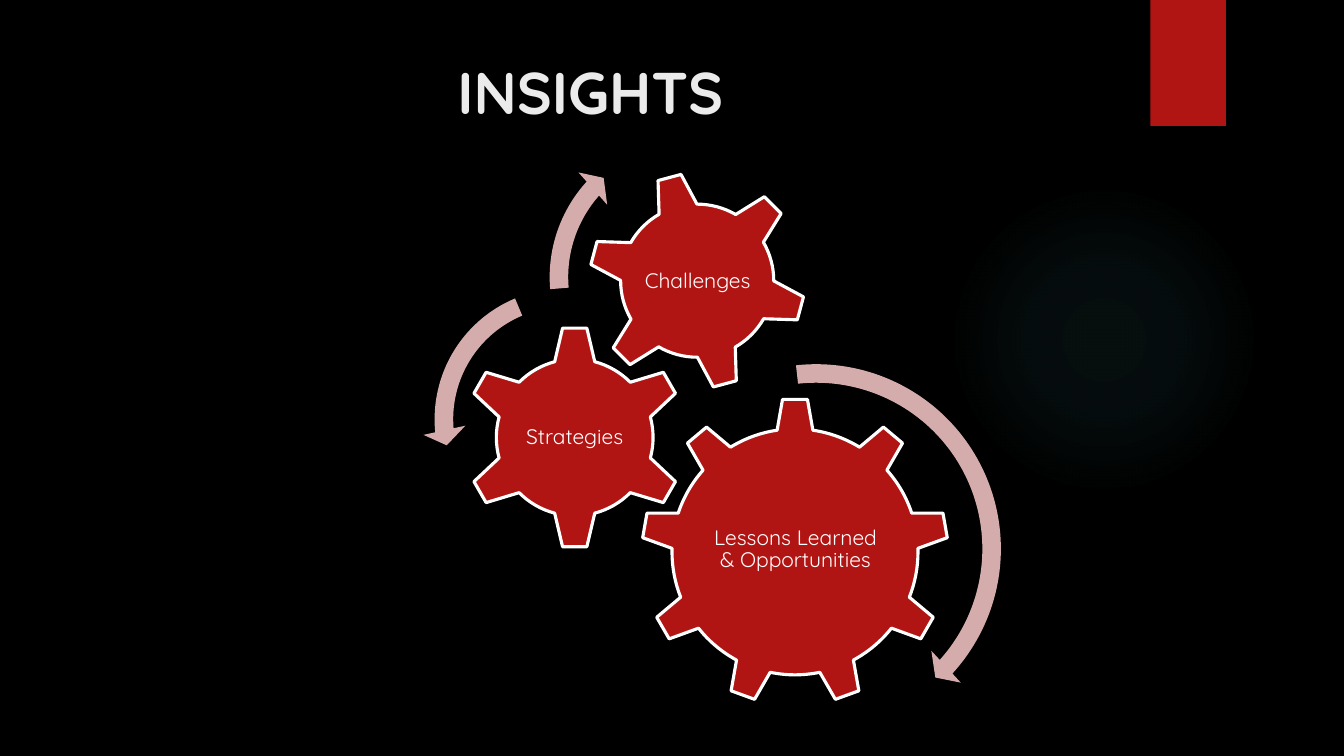
import pptx
import pptx.util
import pptx.oxml
import pptx.oxml.ns
import pptx.dml.color
import pptx.enum.shapes
import pptx.enum.text

Inches = pptx.util.Inches
Kind = pptx.enum.shapes.MSO_SHAPE
Anchor = pptx.enum.text.MSO_ANCHOR

COLORS = {
    "back": "000000",
    "red": "B01513",
    "pink": "D4ACAB",
    "white": "FFFFFF",
    "title": "EBEBEB",
    "glow": "50B9C1",
}


def color(name):
    return pptx.dml.color.RGBColor.from_string(COLORS[name])


class Deck:
    font = "Quicksand"

    def __init__(self):
        self.show = pptx.Presentation()
        self.show.slide_width = Inches(13.33)
        self.show.slide_height = Inches(7.5)
        self.slide = self.show.slides.add_slide(self.show.slide_layouts[6])
        fill = self.slide.background.fill
        fill.solid()
        fill.fore_color.rgb = color("back")

    def shape(self, kind, box, fill, line=None, turn=0, adjust=()):
        item = self.slide.shapes.add_shape(kind, *map(Inches, box))
        item.shadow.inherit = False
        item.rotation = turn
        for i, value in enumerate(adjust):
            item.adjustments[i] = value
        item.fill.solid()
        item.fill.fore_color.rgb = color(fill)
        if line:
            item.line.color.rgb = color(line)
            item.line.width = pptx.util.Pt(2.25)
        else:
            item.line.fill.background()
        return item

    def glow(self, box, stops):
        """Draw a soft round light; stops are (position %, opacity %)."""
        item = self.shape(Kind.OVAL, box, "glow")
        marks = "".join(
            f'<a:gs pos="{pos * 1000}"><a:srgbClr val="{COLORS["glow"]}">'
            f'<a:alpha val="{alpha * 1000}"/></a:srgbClr></a:gs>'
            for pos, alpha in stops)
        grad = pptx.oxml.parse_xml(
            f'<a:gradFill {pptx.oxml.ns.nsdecls("a")}><a:gsLst>{marks}</a:gsLst>'
            '<a:path path="circle"><a:fillToRect l="50000" t="50000" '
            'r="50000" b="50000"/></a:path></a:gradFill>')
        props = item.fill._xPr
        props.replace(props.find(pptx.oxml.ns.qn("a:solidFill")), grad)

    def text(self, words, box, size=15, fill="white", bold=False,
             anchor=Anchor.MIDDLE, inset=(0.02, 0.02), lead=0.9):
        frame = self.slide.shapes.add_textbox(*map(Inches, box)).text_frame
        frame.word_wrap = True
        frame.vertical_anchor = anchor
        frame.margin_left = frame.margin_right = Inches(inset[0])
        frame.margin_top = frame.margin_bottom = Inches(inset[1])
        para = frame.paragraphs[0]
        para.alignment = pptx.enum.text.PP_ALIGN.CENTER
        para.line_spacing = lead
        run = para.add_run()
        run.text = words
        run.font.name = self.font
        run.font.size = pptx.util.Pt(size)
        run.font.bold = bold
        run.font.color.rgb = color(fill)

    def gear(self, words, kind, box, area, turn=0):
        self.shape(kind, box, "red", line="white", turn=turn)
        self.text(words, area)

    def arrow(self, kind, left, top, side, adjust):
        self.shape(kind, (left, top, side, side), "pink", adjust=adjust)


def main():
    deck = Deck()

    # Backdrop and title
    deck.glow((9.41, 1.83, 3.08, 3.08), [(0, 7), (36, 6), (69, 0)])
    deck.shape(Kind.RECTANGLE, (11.41, 0, 0.75, 1.25), "red")
    deck.text("INSIGHTS", (0.71, 0.5, 10.29, 1.53), size=42, fill="title",
              bold=True, anchor=Anchor.TOP, inset=(0.1, 0.05), lead=1.0)

    # Gears with their labels
    deck.gear("Lessons Learned & Opportunities", Kind.GEAR_9,
              (6.36, 3.95, 3.05, 3.05), (6.98, 4.67, 1.82, 1.57))
    deck.gear("Strategies", Kind.GEAR_6,
              (4.59, 3.23, 2.22, 2.22), (5.15, 3.79, 1.1, 1.1))
    deck.gear("Challenges", Kind.GEAR_6,
              (5.83, 1.7, 2.17, 2.17), (6.31, 2.18, 1.22, 1.22), turn=345)

    # Turning arrows
    deck.arrow(Kind.CIRCULAR_ARROW, 6.14, 3.49, 3.91,
               (0.047, 2.99, 25.338, 158.238, 0.055))
    deck.arrow(Kind.LEFT_CIRCULAR_ARROW, 4.19, 2.74, 2.84,
               (0.065, 4.3, 104.891, 148.378, 0.075))
    deck.arrow(Kind.CIRCULAR_ARROW, 5.33, 1.22, 3.06,
               (0.06, 3.941, 133.138, 105.082, 0.07))

    deck.show.save("out.pptx")


if __name__ == "__main__":
    main()
